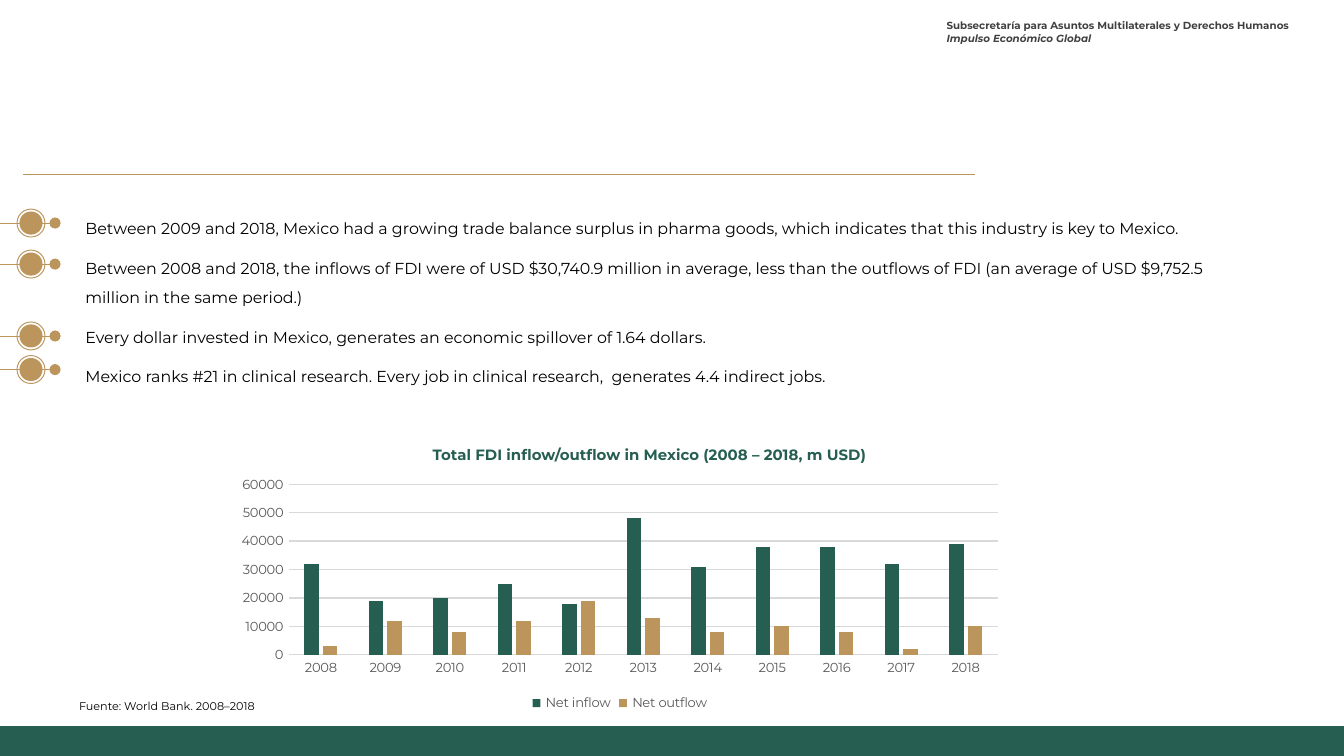
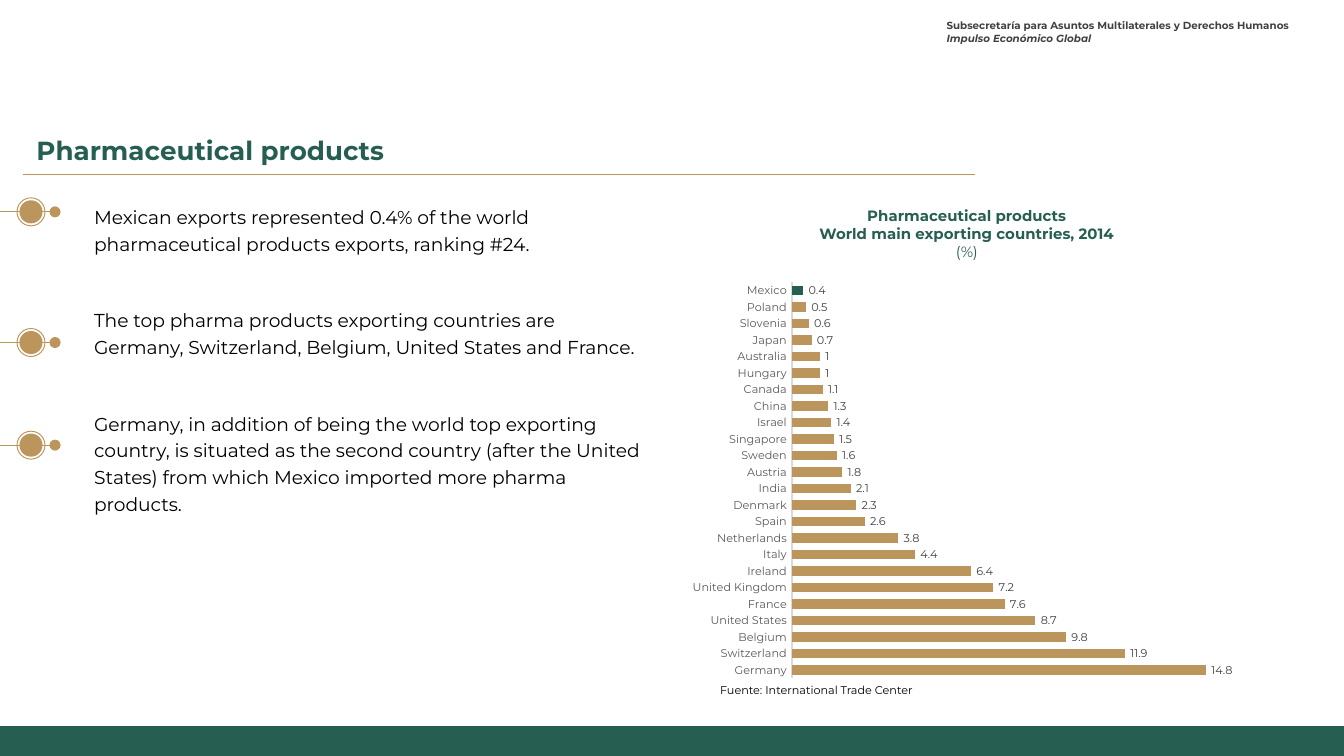
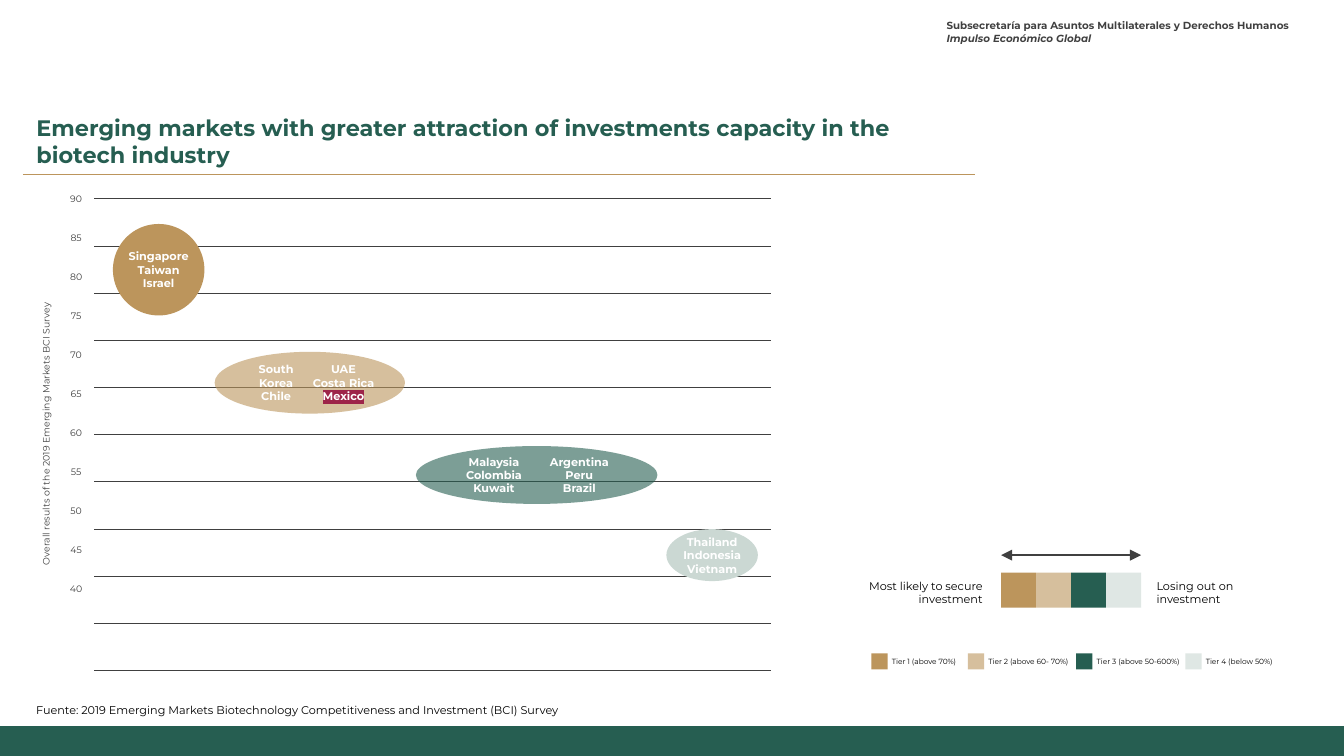
"""Three slides on investment flows, pharmaceutical exports and biotech markets."""
from lxml import etree
from pptx import Presentation
from pptx.chart.data import CategoryChartData
from pptx.dml.color import RGBColor
from pptx.enum import chart as ch, shapes, text
from pptx.oxml.ns import qn
from pptx.util import Pt

FONT = "Montserrat"
COLORS = {"green": "265E51", "gold": "BC955C", "mist": "CBD8D3", "wine": "9D2449",
          "dark": "404040", "gray": "595959", "grid": "D9D9D9",
          "black": "000000", "white": "FFFFFF"}
LEFT, CENTER, RIGHT = text.PP_ALIGN.LEFT, text.PP_ALIGN.CENTER, text.PP_ALIGN.RIGHT
OVAL, RECT = shapes.MSO_SHAPE.OVAL, shapes.MSO_SHAPE.RECTANGLE
PAD = (7.2, 3.6, 7.2, 3.6)
BARE = (0, 0, 0, 0)
RULE = (12.3, 93.5, 522.5, 93.5)
FOOTER = (0, 389, 720, 16)
HEADER = ["Subsecretaría para Asuntos Multilaterales y Derechos Humanos",
          ("Impulso Económico Global", {"italic": True})]

FDI_POINTS = [
    "Between 2009 and 2018, Mexico had a growing trade balance surplus in pharma goods, which indicates that this industry is key to Mexico.",
    "Between 2008 and 2018, the inflows of FDI were of USD $30,740.9 million in average, less than the outflows of FDI (an average of USD $9,752.5 million in the same period.)",
    "Every dollar invested in Mexico, generates an economic spillover of 1.64 dollars.",
    "Mexico ranks #21 in clinical research. Every job in clinical research,\u00a0 generates 4.4 indirect jobs."]
FDI_MARKERS = [119.5, 141.5, 180, 198]
FDI_YEARS = [str(y) for y in range(2008, 2019)]
FDI_SERIES = [
    ("Net inflow", "green", [32000, 19000, 20000, 25000, 18000, 48000, 31000, 38000, 38000, 32000, 39000]),
    ("Net outflow", "gold", [3000, 12000, 8000, 12000, 19000, 13000, 8000, 10000, 8000, 2000, 10000])]

PHARMA_POINTS = [
    "Mexican exports represented 0.4% of the world pharmaceutical products exports, ranking #24.",
    "The top pharma products exporting countries are Germany, Switzerland, Belgium, United States and France.",
    "Germany, in addition of being the world top exporting country, is situated as the second country (after the United States) from which Mexico imported more pharma products."]
PHARMA_MARKERS = [113.5, 183.5, 238.5]
EXPORTERS = {
    "Germany": 14.8, "Switzerland": 11.9, "Belgium": 9.8, "United States": 8.7,
    "France": 7.6, "United Kingdom": 7.2, "Ireland": 6.4, "Italy": 4.4,
    "Netherlands": 3.8, "Spain": 2.6, "Denmark": 2.3, "India": 2.1, "Austria": 1.8,
    "Sweden": 1.6, "Singapore": 1.5, "Israel": 1.4, "China": 1.3, "Canada": 1.1,
    "Hungary": 1, "Australia": 1, "Japan": 0.7, "Slovenia": 0.6, "Poland": 0.5,
    "Mexico": 0.4}

MARKETS = [
    ((60.5, 120, 49, 49), "gold", 100, 1, ["Singapore", "Taiwan", "Israel"]),
    ((115, 188.5, 102, 33.1), "gold", 60, 2,
     ["South Korea", "Chile", "UAE", "Costa Rica", ("Mexico", {"highlight": "wine"})]),
    ((222.8, 239, 129.4, 31), "green", 60, 2,
     ["Malaysia", "Colombia", "Kuwait", "Argentina", "Peru", "Brazil"]),
    ((357, 283.5, 49, 27.8), "mist", 100, 1, ["Thailand", "Indonesia", "Vietnam"])]
TIERS = [("Tier 1 (above 70%)", "gold", 100, 466.8),
         ("Tier 2 (above 60- 70%)", "gold", 60, 518.5),
         ("Tier 3 (above 50-600%)", "green", 100, 576.5),
         ("Tier 4 (below 50%)", "mist", 60, 635)]
SCALE_ENDS = [(457.2, RIGHT, ["Most likely to secure", "investment"]),
              (612.5, LEFT, ["Losing out on", "investment"])]
SCALE = {"x": 536.3, "y": 306.8, "step": 18.75}
GRID = {"x1": 50.4, "x2": 413.2, "y": 106.4, "step": 25.28, "count": 11}


def rgb(name):
    return RGBColor.from_string(COLORS[name])


def put(obj, **values):
    for key, value in values.items():
        setattr(obj, key, value)


def style(font, size, color, **more):
    put(font, name=FONT, size=Pt(size), **more)
    font.color.rgb = rgb(color)


def write(tf, lines, size, color="black", inset=PAD, anchor=text.MSO_ANCHOR.TOP,
          bold=False, **para):
    sides = ("margin_left", "margin_top", "margin_right", "margin_bottom")
    put(tf, word_wrap=True, auto_size=text.MSO_AUTO_SIZE.NONE, vertical_anchor=anchor,
        **{side: Pt(v) for side, v in zip(sides, inset)})
    for i, line in enumerate(lines):
        words, extra = (line, {}) if isinstance(line, str) else line
        p = tf.paragraphs[0] if i == 0 else tf.add_paragraph()
        put(p, **para)
        r = p.add_run()
        r.text = words
        font = {k: v for k, v in extra.items() if k != "highlight"}
        style(r.font, size, color, **{"bold": bold, **font})
        if "highlight" in extra:
            mark = etree.Element(qn("a:highlight"))
            etree.SubElement(mark, qn("a:srgbClr"), val=COLORS[extra["highlight"]])
            r.font._element.find(qn("a:solidFill")).addnext(mark)


def label(parent, box, lines, size, **values):
    sp = parent.add_textbox(*map(Pt, box))
    write(sp.text_frame, lines, size, **values)
    return sp


def shape(parent, kind, box, fill=None, alpha=100, line=None):
    sp = parent.add_shape(kind, *map(Pt, box))
    sp.shadow.inherit = False
    if fill:
        sp.fill.solid()
        sp.fill.fore_color.rgb = rgb(fill)
        if alpha < 100:
            clr = sp._element.spPr.find(".//" + qn("a:srgbClr"))
            etree.SubElement(clr, qn("a:alpha"), val=str(alpha * 1000))
    else:
        sp.fill.background()
    if line:
        sp.line.color.rgb = rgb(line)
        sp.line.width = Pt(0.5)
    else:
        sp.line.fill.background()
    return sp


def connect(parent, ends, color, width, **heads):
    cx = parent.add_connector(shapes.MSO_CONNECTOR.STRAIGHT, *map(Pt, ends))
    cx.line.color.rgb = rgb(color)
    cx.line.width = Pt(width)
    for end in ("headEnd", "tailEnd"):
        if end in heads:
            etree.SubElement(cx.line._ln, qn("a:" + end), type=heads[end])
    etree.SubElement(cx._element.spPr, qn("a:effectLst"))


def new_slide(prs, title=None, box=None, size=None):
    s = prs.slides.add_slide(prs.slide_layouts[5 if title else 6])
    if title:
        sp = s.shapes.title
        put(sp, **dict(zip(("left", "top", "width", "height"), map(Pt, box))))
        write(sp.text_frame, [title], size, "green", bold=True, alignment=LEFT)
    label(s.shapes, (502.5, 5.8, 193, 25.2), HEADER, 5.5, color="dark",
          bold=True, inset=(4.6,) * 4)
    shape(s.shapes, RECT, FOOTER, "green")
    connect(s.shapes, RULE, "gold", 0.75)
    return s


def markers(s, centres):
    for y in centres:
        group = s.shapes.add_group_shape().shapes
        for d, look in ((12.4, {"fill": "gold"}), (15, {"line": "gold"})):
            shape(group, OVAL, (16.6 - d / 2, y - d / 2, d, d), **look)
        connect(group, (29.5, y, 0, y), "gold", 0.5, headEnd="oval")


def add_chart(s, kind, box, cats, series, size, gap, overlap, top):
    data = CategoryChartData()
    data.categories = cats
    for name, _, values in series:
        data.add_series(name, values)
    chart = s.shapes.add_chart(kind, *map(Pt, box), data).chart
    put(chart, has_title=False, has_legend=False)
    style(chart.font, size, "black")
    plot = chart.plots[0]
    put(plot, gap_width=gap, overlap=overlap, vary_by_categories=False)
    for ser, (_, color, _) in zip(plot.series, series):
        ser.format.fill.solid()
        ser.format.fill.fore_color.rgb = rgb(color)
        ser.invert_if_negative = False
    for axis in (chart.category_axis, chart.value_axis):
        put(axis, major_tick_mark=ch.XL_TICK_MARK.NONE, minor_tick_mark=ch.XL_TICK_MARK.NONE,
            has_major_gridlines=False)
        style(axis.tick_labels.font, size, "gray")
    put(chart.value_axis, minimum_scale=0, maximum_scale=top)
    line = chart.category_axis.format.line
    line.color.rgb = rgb("grid")
    line.width = Pt(0.75)
    return chart


def fdi_slide(prs):
    s = new_slide(prs)
    label(s.shapes, (38.7, 108.7, 619.2, 101), FDI_POINTS, 8.5,
          line_spacing=1.5, space_after=Pt(6))
    markers(s, FDI_MARKERS)
    label(s.shapes, (208.8, 235.4, 278.6, 17.3),
          ["Total FDI inflow/outflow in Mexico (2008 – 2018, m USD)"], 8,
          color="green", bold=True, alignment=CENTER)
    chart = add_chart(s, ch.XL_CHART_TYPE.COLUMN_CLUSTERED, (121, 252.7, 422, 131),
                      FDI_YEARS, FDI_SERIES, 7, 219, -27, 60000)
    axis = chart.value_axis
    put(axis, has_major_gridlines=True, major_unit=10000)
    axis.format.line.fill.background()
    grid = axis.major_gridlines.format.line
    grid.color.rgb = rgb("grid")
    grid.width = Pt(0.75)
    chart.has_legend = True
    put(chart.legend, position=ch.XL_LEGEND_POSITION.BOTTOM, include_in_layout=False)
    style(chart.legend.font, 7, "gray")
    label(s.shapes, (35.3, 370.8, 247.7, 14.4), ["Fuente: World Bank. 2008–2018"], 6,
          alignment=text.PP_ALIGN.JUSTIFY, line_spacing=1.07)


def pharma_slide(prs):
    s = new_slide(prs, "Pharmaceutical products", (12.3, 68.4, 347.8, 24.5), 14)
    label(s.shapes, (38.9, 104.4, 311, 175.7), PHARMA_POINTS, 10,
          inset=(11.5, 3.6, 7.2, 3.6), line_spacing=1.2, space_after=Pt(26.5))
    markers(s, PHARMA_MARKERS)
    label(s.shapes, (378.7, 107.3, 278.6, 36),
          ["Pharmaceutical products", "World main exporting countries, 2014",
           ("(%)", {"bold": False})], 8, color="green", bold=True, alignment=CENTER)
    names = list(EXPORTERS)
    chart = add_chart(s, ch.XL_CHART_TYPE.BAR_CLUSTERED, (365, 146.9, 305.3, 221), names,
                      [("Series 1", "gold", list(EXPORTERS.values()))], 6, 75, 0, 16)
    chart.value_axis.visible = False
    ser = chart.plots[0].series[0]
    fill = ser.points[names.index("Mexico")].format.fill
    fill.solid()
    fill.fore_color.rgb = rgb("green")
    labels = ser.data_labels
    put(labels, show_value=True, position=ch.XL_LABEL_POSITION.OUTSIDE_END)
    style(labels.font, 6, "dark")
    label(s.shapes, (378.7, 362.2, 291, 14.4), ["Fuente: International Trade Center"], 6,
          line_spacing=1.07)


def biotech_slide(prs):
    s = new_slide(prs, "Emerging markets with greater attraction of investments capacity in the biotech industry",
                  (12.3, 57.6, 510.5, 36), 12)
    label(s.shapes, (12.3, 373, 599, 14.4),
          ["Fuente: 2019 Emerging Markets Biotechnology Competitiveness and Investment (BCI) Survey"], 6)

    plot = s.shapes.add_group_shape().shapes
    for i in range(GRID["count"]):
        y = GRID["y"] + i * GRID["step"]
        connect(plot, (GRID["x1"], y, GRID["x2"], y), "dark", 0.25)
    sp = label(plot, (-78.5, 224.6, 208.8, 15.8),
               ["Overall results of the 2019 Emerging Markets BCI Survey"], 5,
               color="dark", alignment=CENTER)
    sp.rotation = 270
    label(plot, (28.2, 85, 25.2, 286), [str(v) for v in range(90, 39, -5)], 5,
          color="dark", alignment=CENTER, line_spacing=3.5)
    for box, color, alpha, columns, names in MARKETS:
        sp = shape(plot, OVAL, box, color, alpha)
        write(sp.text_frame, names, 6, "white", BARE, text.MSO_ANCHOR.MIDDLE, True,
              alignment=CENTER)
        if columns > 1:
            sp.text_frame._txBody.bodyPr.set("numCol", str(columns))

    key = s.shapes.add_group_shape().shapes
    x, y, step = SCALE["x"], SCALE["y"], SCALE["step"]
    for i, (name, color, alpha, left) in enumerate(TIERS):
        shape(key, RECT, (x + i * step, y, step, step), color, alpha)
        shape(key, RECT, (left, 350, 8.7, 8.7), color, alpha)
        label(key, (left + 11, 352, 55, 5), [name], 4, inset=BARE)
    connect(key, (x, 297.4, x + len(TIERS) * step, 297.4), "dark", 1,
            headEnd="triangle", tailEnd="triangle")
    for left, align, lines in SCALE_ENDS:
        label(key, (left, y, 76.3, 21.6), lines, 6, alignment=align)


def main():
    prs = Presentation()
    put(prs, slide_width=Pt(720), slide_height=Pt(405))
    for build in (fdi_slide, pharma_slide, biotech_slide):
        build(prs)
    prs.save("out.pptx")


if __name__ == "__main__":
    main()
